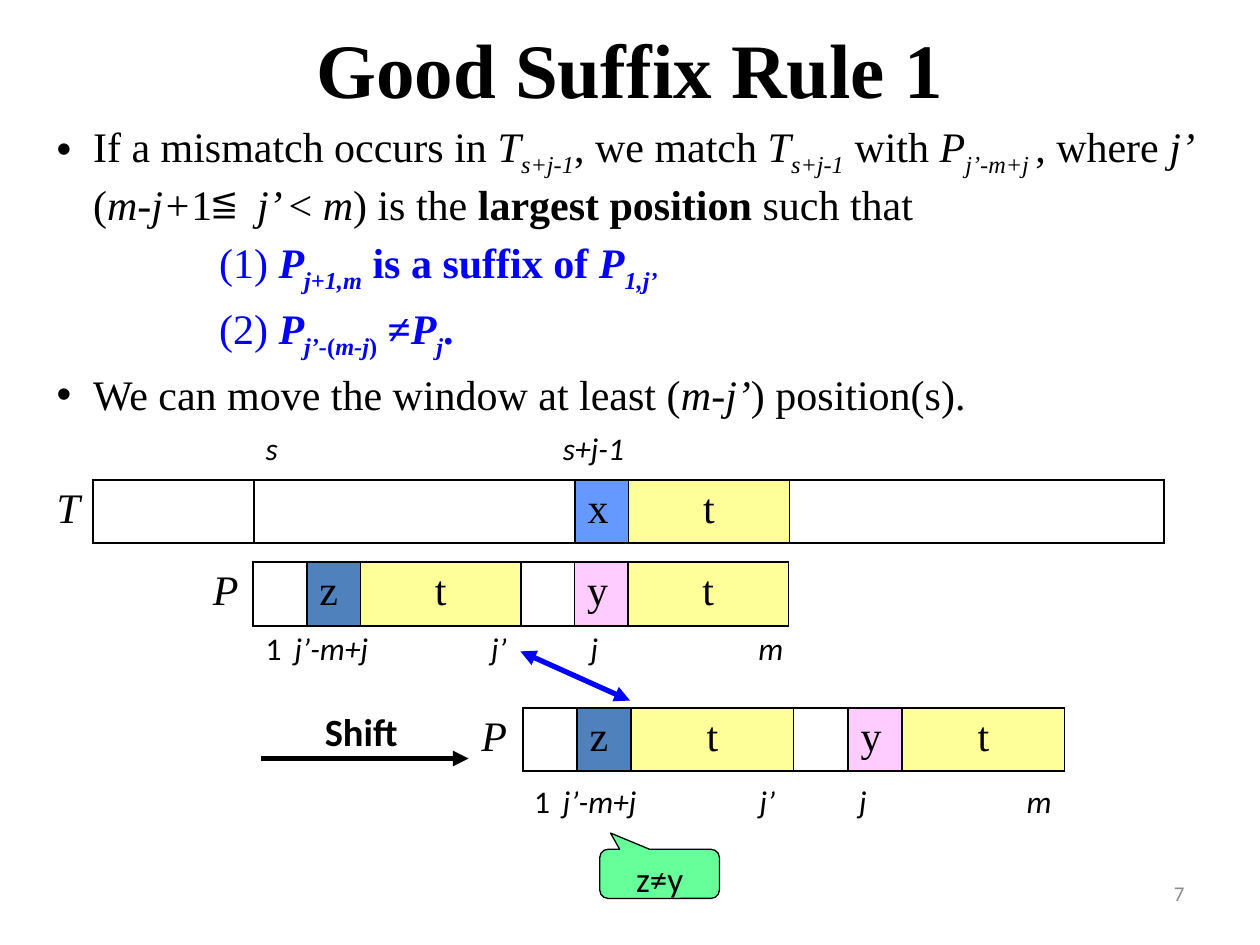
"""Build the slide that explains good suffix rule 1 of string matching."""
from dataclasses import dataclass

from lxml.etree import SubElement
from pptx import Presentation
from pptx.dml.color import RGBColor
from pptx.enum.shapes import MSO_CONNECTOR, MSO_SHAPE
from pptx.enum.text import MSO_ANCHOR, PP_ALIGN
from pptx.oxml.ns import qn
from pptx.util import Inches, Pt


@dataclass(frozen=True)
class Theme:
    serif: str = "Times New Roman"
    sans: str = "Calibri"
    black: str = "000000"
    blue: str = "0000FF"
    grey: str = "8C8C8C"
    steel: str = "4F81BD"
    sky: str = "6699FF"
    yellow: str = "FFFF99"
    pink: str = "FFCCFF"
    green: str = "66FF99"
    title: int = 44
    body: int = 24
    shift: int = 22
    callout: int = 20
    label: int = 18
    number: int = 12


THEME = Theme()
TITLE = "Good Suffix Rule 1"

# Style letters: b bold, i italic, s subscript.
BODY = [
    ("bullet", THEME.black, [
        ("If a mismatch occurs in ", ""), ("T", "i"), ("s+j-1", "is"),
        (", we match ", ""), ("T", "i"), ("s+j-1", "is"), (" with ", ""),
        ("P", "i"), ("j’-m+j ", "is"), (", where ", ""), ("j’ ", "i"),
        ("(", ""), ("m-j+", "i"), ("1≦  ", ""), ("j’ ", "i"), ("< ", ""),
        ("m", "i"), (") is the ", ""), ("largest position", "b"),
        (" such that", "")]),
    ("condition", THEME.blue, [
        ("(1) ", ""), ("P", "bi"), ("j+1,m", "bis"),
        (" is a suffix of ", "b"), ("P", "bi"), ("1,j’", "bis")]),
    ("condition", THEME.blue, [
        ("(2) ", ""), ("P", "bi"), ("j’-", "bis"), ("(", "bs"),
        ("m-j", "bis"), (")", "bs"), (" ≠", "b"), ("P", "bi"),
        ("j", "bis"), (".", "b")]),
    ("bullet", THEME.black, [
        ("We can move the window at least (", ""), ("m", "i"), ("-", ""),
        ("j’", "i"), (") position(s).", "")]),
]
INDENTS = {"bullet": (0.29, -0.29), "condition": (1.29, 0)}

TEXT_CELLS = [("", 3, None), ("", 6, None), ("x", 1, THEME.sky),
              ("t", 3, THEME.yellow), ("", 7, None)]
PATTERN_CELLS = [("", 1, None), ("z", 1, THEME.steel), ("t", 3, THEME.yellow),
                 ("", 1, None), ("y", 1, THEME.pink), ("t", 3, THEME.yellow)]
STRIPS = [
    ("T", 0.35, 3.81, 0.39, 0.425, 0.48, TEXT_CELLS),
    ("P", 1.59, 4.46, 0.42, 0.425, 0.51, PATTERN_CELLS),
    ("P", 3.72, 5.62, 0.43, 0.43, 0.49, PATTERN_CELLS),
]

WINDOW_LABELS = [("s", 2.01, 0.32), ("s+j-1", 4.37, 1.1)]
PATTERN_LABELS = [("1", 0, 0.39), ("j’-m+j", 0.23, 1.1), ("j’", 1.79, 0.47),
                  ("j", 2.58, 0.7), ("m", 3.91, 0.39)]
LABEL_ROWS = [(0, 3.36, WINDOW_LABELS), (2.01, 4.94, PATTERN_LABELS),
              (4.14, 6.16, PATTERN_LABELS)]
ARROWS = [((2.07, 6.02), (3.72, 6.02), THEME.black, ("tailEnd",)),
          ((4.13, 5.17), (5, 5.56), THEME.blue, ("headEnd", "tailEnd"))]


def add_span(para, text, size, font, color=THEME.black, style=""):
    span = para.add_run()
    span.text = text
    span.font.size = Pt(size)
    span.font.name = font
    span.font.color.rgb = RGBColor.from_string(color)
    span.font.bold = "b" in style
    span.font.italic = "i" in style
    if "s" in style:
        span.font._element.set("baseline", "-25000")


def add_box(page, left, top, width, height):
    box = page.shapes.add_textbox(*map(Inches, (left, top, width, height)))
    box.text_frame.word_wrap = True
    return box.text_frame


def add_title(page):
    title = page.shapes.title
    title.left, title.top, title.width, title.height = map(Inches, (0.5, 0, 9, 1.07))
    title.text_frame.vertical_anchor = MSO_ANCHOR.MIDDLE
    para = title.text_frame.paragraphs[0]
    para.alignment = PP_ALIGN.CENTER
    add_span(para, TITLE, THEME.title, THEME.serif, style="b")


def add_body(page):
    frame = add_box(page, 0.35, 0.91, 9.45, 2.52)
    for index, (kind, color, spans) in enumerate(BODY):
        para = frame.add_paragraph() if index else frame.paragraphs[0]
        para.space_before = Pt(THEME.body * 0.2)
        margin, indent = INDENTS[kind]
        properties = para._p.get_or_add_pPr()
        properties.set("marL", str(Inches(margin)))
        properties.set("indent", str(Inches(indent)))
        if kind == "bullet":
            SubElement(properties, qn("a:buFont"), typeface="Arial")
            SubElement(properties, qn("a:buChar"), char="•")
        for text, style in spans:
            add_span(para, text, THEME.body, THEME.serif, color, style)


def set_border(cell, sides):
    properties = cell._tc.get_or_add_tcPr()
    for position, side in enumerate("LRTB"):
        line = properties.makeelement(qn(f"a:ln{side}"), {"w": str(Pt(1))})
        properties.insert(position, line)
        if side in sides:
            fill = SubElement(line, qn("a:solidFill"))
            SubElement(fill, qn("a:srgbClr"), val=THEME.black)
        else:
            SubElement(line, qn("a:noFill"))


def add_strip(page, name, left, top, name_width, unit, height, parts):
    widths = [name_width] + [unit * units for _, units, _ in parts]
    cells = [(name, None)] + [(text, fill) for text, _, fill in parts]
    table = page.shapes.add_table(
        1, len(cells), *map(Inches, (left, top, sum(widths), height))).table
    table.first_row = table.horz_banding = False
    for index, (text, fill) in enumerate(cells):
        table.columns[index].width = Inches(widths[index])
        cell = table.cell(0, index)
        if fill:
            cell.fill.solid()
            cell.fill.fore_color.rgb = RGBColor.from_string(fill)
        else:
            cell.fill.background()
        set_border(cell, "LRTB" if index else "R")
        para = cell.text_frame.paragraphs[0]
        para.alignment = PP_ALIGN.CENTER if text == "t" else PP_ALIGN.LEFT
        if text:
            add_span(para, text, THEME.body, THEME.serif, style="" if index else "i")


def add_labels(page):
    for origin, top, labels in LABEL_ROWS:
        for text, offset, width in labels:
            para = add_box(page, origin + offset, top, width, 0.5).paragraphs[0]
            add_span(para, text, THEME.label, THEME.sans,
                     style="" if text == "1" else "i")
    shift = add_box(page, 2.48, 5.57, 0.94, 0.47).paragraphs[0]
    add_span(shift, "Shift", THEME.shift, THEME.sans, style="b")
    number = add_box(page, 7.17, 6.83, 2.33, 0.52)
    number.vertical_anchor = MSO_ANCHOR.MIDDLE
    number.paragraphs[0].alignment = PP_ALIGN.RIGHT
    add_span(number.paragraphs[0], "7", THEME.number, THEME.sans, THEME.grey)


def add_arrow(page, start, end, color, heads):
    arrow = page.shapes.add_connector(
        MSO_CONNECTOR.STRAIGHT, *map(Inches, start + end))
    arrow.line.color.rgb = RGBColor.from_string(color)
    arrow.line.width = Pt(3)
    for head in heads:
        SubElement(arrow.line._get_or_add_ln(), qn(f"a:{head}"), type="triangle")
    SubElement(arrow._element.spPr, qn("a:effectLst"))


def add_callout(page):
    callout = page.shapes.add_shape(MSO_SHAPE.ROUNDED_RECTANGULAR_CALLOUT,
                                    *map(Inches, (4.76, 6.74, 0.95, 0.39)))
    for index, value in enumerate((-0.41, -0.83, 0.17)):
        callout.adjustments[index] = value
    callout.shadow.inherit = False
    callout.fill.solid()
    callout.fill.fore_color.rgb = RGBColor.from_string(THEME.green)
    callout.line.color.rgb = RGBColor.from_string(THEME.black)
    callout.line.width = Pt(0.75)
    callout.text_frame.vertical_anchor = MSO_ANCHOR.TOP
    para = callout.text_frame.paragraphs[0]
    para.alignment = PP_ALIGN.CENTER
    add_span(para, "z≠y", THEME.callout, THEME.sans)


def main():
    deck = Presentation()
    deck.slide_width, deck.slide_height = Inches(10), Inches(7.5)
    page = deck.slides.add_slide(deck.slide_layouts[5])
    add_title(page)
    add_body(page)
    for strip in STRIPS:
        add_strip(page, *strip)
    add_labels(page)
    for arrow in ARROWS:
        add_arrow(page, *arrow)
    add_callout(page)
    deck.save("out.pptx")


if __name__ == "__main__":
    main()
